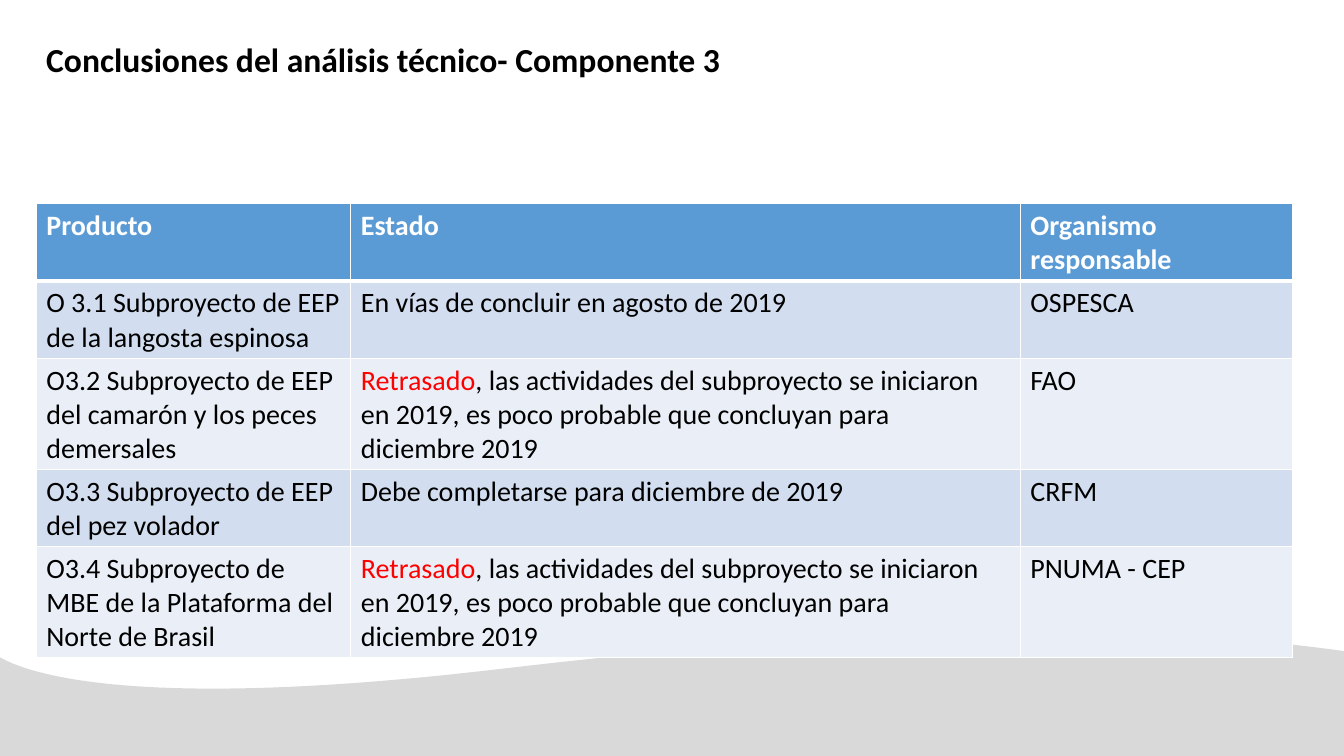
from lxml import etree
from pptx import Presentation, util as u
from pptx.dml.color import RGBColor
from pptx.oxml.ns import qn

PX = u.Inches(1) // 100
COLORS = {"wave": "D9D9D9", "black": "000000", "white": "FFFFFF", "late": "FF0000",
          "header": "5B9BD5", "odd": "D2DEEF", "even": "EAEFF7"}


def write(paragraph, wording, color, size, bold):
    run = paragraph.add_run()
    run.text = wording
    for key, value in {"name": "Calibri", "size": u.Pt(size), "bold": bold}.items():
        setattr(run.font, key, value)
    run.font.color.rgb = RGBColor.from_string(COLORS[color])


def set_borders(cell, widths):
    properties = cell._tc.get_or_add_tcPr()
    for index, (side, width) in enumerate(widths.items()):
        line = etree.Element(qn(f"a:ln{side}"), w=str(u.Pt(width)))
        fill = etree.SubElement(line, qn("a:solidFill"))
        etree.SubElement(fill, qn("a:srgbClr"), val=COLORS["white"])
        properties.insert(index, line)


deck = Presentation()
deck.slide_width, deck.slide_height = 1333 * PX, 750 * PX
slide = deck.slides.add_slide(deck.slide_layouts[6])

crest = [(1333, 646), (1165, 622), (902, 616), (502, 663), (133, 707), (26, 668), (-2, 651)]
STEPS = 40
outline = [crest[0]]
for start in (0, 3):
    curve = crest[start:start + 4]
    for step in range(1, STEPS + 1):
        t = step / STEPS
        weights = ((1 - t) ** 3, 3 * t * (1 - t) ** 2, 3 * t ** 2 * (1 - t), t ** 3)
        outline.append([sum(w * p[axis] for w, p in zip(weights, curve)) for axis in (0, 1)])
outline.append((-2, 750))
builder = slide.shapes.build_freeform(1333 * PX, 750 * PX)
builder.add_line_segments([(round(x * PX), round(y * PX)) for x, y in outline])
wave = builder.convert_to_shape()
wave.shadow.inherit = False
wave.fill.solid()
wave.fill.fore_color.rgb = RGBColor.from_string(COLORS["wave"])
wave.line.fill.background()

title = slide.shapes.add_textbox(36 * PX, 34 * PX, 701 * PX, 50 * PX).text_frame
title.word_wrap = True
write(title.paragraphs[0], "Conclusiones del análisis técnico- Componente 3", "black", 24, True)

DELAYED = "Retrasado"
delay = (DELAYED + ", las actividades del subproyecto se iniciaron en 2019, "
         "es poco probable que concluyan para diciembre 2019")
outputs = [
    ("Producto", "Estado", "Organismo responsable"),
    ("O 3.1 Subproyecto de EEP de la langosta espinosa",
     "En vías de concluir en agosto de 2019", "OSPESCA"),
    ("O3.2 Subproyecto de EEP del camarón y los peces demersales", delay, "FAO"),
    ("O3.3 Subproyecto de EEP del pez volador",
     "Debe completarse para diciembre de 2019", "CRFM"),
    ("O3.4 Subproyecto de MBE de la Plataforma del Norte de Brasil", delay, "PNUMA - CEP"),
]
widths = (312, 664, 270)
heights = (76, 76, 110, 76, 110)
status = slide.shapes.add_table(len(outputs), len(widths), 36 * PX, 202 * PX,
                                sum(widths) * PX, sum(heights) * PX).table
status.horz_banding = False
for column, width in zip(status.columns, widths):
    column.width = width * PX
for r, (output, height) in enumerate(zip(outputs, heights)):
    status.rows[r].height = height * PX
    band = "header" if r == 0 else "odd" if r % 2 else "even"
    ink = "black" if r else "white"
    for c, wording in enumerate(output):
        cell = status.cell(r, c)
        cell.fill.solid()
        cell.fill.fore_color.rgb = RGBColor.from_string(COLORS[band])
        set_borders(cell, {"L": 1, "R": 1, "T": 3 if r == 1 else 1, "B": 1 if r else 3})
        paragraph = cell.text_frame.paragraphs[0]
        if wording.startswith(DELAYED):
            write(paragraph, DELAYED, "late", 20, False)
            wording = wording.removeprefix(DELAYED)
        write(paragraph, wording, ink, 20, r == 0)

deck.save("out.pptx")
